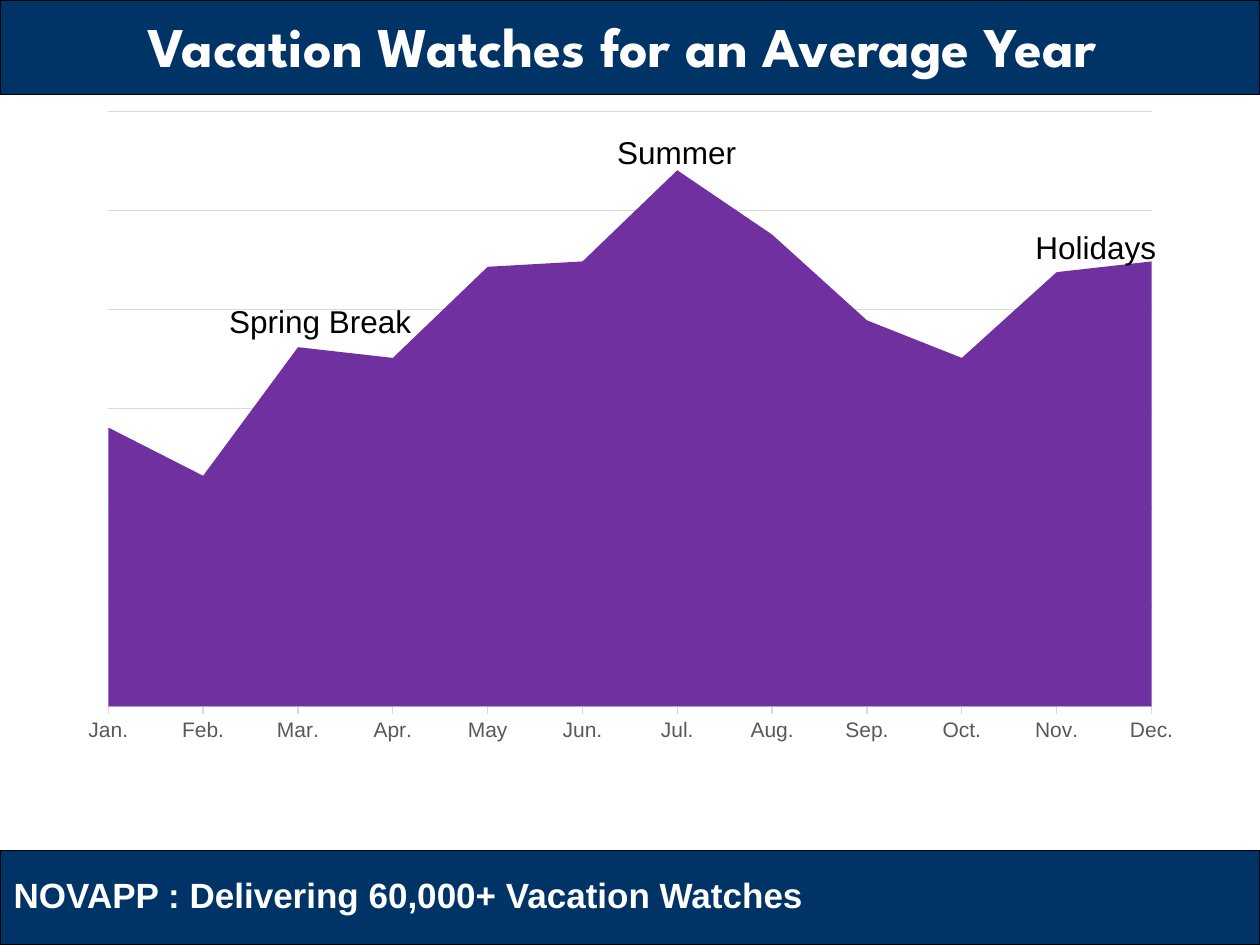
import pptx
import pptx.util
import pptx.chart.data
import pptx.dml.color
import pptx.enum.chart
import pptx.enum.shapes
import pptx.enum.text
import pptx.oxml
from pptx.oxml.ns import nsdecls, qn

Inches, Pt = pptx.util.Inches, pptx.util.Pt
RGBColor = pptx.dml.color.RGBColor

NAVY = RGBColor(0x00, 0x33, 0x66)
PURPLE = RGBColor(0x70, 0x30, 0xA0)
BLACK = RGBColor(0, 0, 0)
WHITE = RGBColor(0xFF, 0xFF, 0xFF)
GRAY = RGBColor(0x59, 0x59, 0x59)
GRID = RGBColor(0xD9, 0xD9, 0xD9)

TITLE = "Vacation Watches for an Average Year "
FOOTER = "NOVAPP : Delivering 60,000+ Vacation Watches"
WATCHES = {
    "Jan.": 52, "Feb.": 43, "Mar.": 67, "Apr.": 65, "May": 82, "Jun.": 83,
    "Jul.": 100, "Aug.": 88, "Sep.": 72, "Oct.": 65, "Nov.": 81, "Dec.": 83,
}
PEAKS = [
    ("Summer", 4.8, 1.01, 1.16),
    ("Spring Break", 1.72, 2.35, 1.66),
    ("Holidays", 8.12, 1.76, 1.17),
]
AXIS_MAX, GRID_STEPS = 111, 6
BAND_H = 0.75
PLOT_LAYOUT = {"x": 0.04, "y": 0.02, "w": 0.92, "h": 0.91}


def add_band(s, top):
    sp = s.shapes.add_shape(pptx.enum.shapes.MSO_SHAPE.RECTANGLE,
                            0, Inches(top), Inches(10), Inches(BAND_H))
    sp.shadow.inherit = False
    sp.fill.solid()
    sp.fill.fore_color.rgb = NAVY
    sp.line.color.rgb = BLACK
    sp.line.width = Pt(0.75)


def add_text(s, text, box, size, color, bold=False, font="Arial", wrap=False):
    tf = s.shapes.add_textbox(*map(Inches, box)).text_frame
    tf.word_wrap = wrap
    p = tf.paragraphs[0]
    p.text = text
    p.font.name, p.font.size, p.font.bold = font, Pt(size), bold
    p.font.color.rgb = color
    return tf


def add_area_chart(s):
    data = pptx.chart.data.CategoryChartData()
    data.categories = list(WATCHES)
    data.add_series("Series 1", list(WATCHES.values()))
    chart = s.shapes.add_chart(pptx.enum.chart.XL_CHART_TYPE.AREA, Inches(0.5), Inches(0.78),
                               Inches(9), Inches(5.19), data).chart
    chart.has_legend = False
    chart.has_title = False
    chart.font.name, chart.font.size = "Arial", Pt(10)
    chart.font.color.rgb = BLACK

    fill = chart.plots[0].series[0].format.fill
    fill.solid()
    fill.fore_color.rgb = PURPLE

    months, counts = chart.category_axis, chart.value_axis
    months.has_major_gridlines = False
    months.major_tick_mark = pptx.enum.chart.XL_TICK_MARK.OUTSIDE
    months.tick_labels.font.name = "Arial"
    months.tick_labels.font.size = Pt(12)
    months.tick_labels.font.color.rgb = GRAY

    counts.minimum_scale, counts.maximum_scale = 0, AXIS_MAX
    counts.major_unit = AXIS_MAX / GRID_STEPS
    counts.has_major_gridlines = True
    counts.visible = False
    for line in (months.format.line, counts.major_gridlines.format.line):
        line.color.rgb = GRID
        line.width = Pt(0.75)

    plot_area = chart._chartSpace.chart.plotArea
    plot_area.find(".//" + qn("c:crossBetween")).set("val", "midCat")
    for old in plot_area.findall(qn("c:layout")):
        plot_area.remove(old)
    modes = "".join(f'<c:{k}Mode val="edge"/>' for k in "xy")
    sizes = "".join(f'<c:{k} val="{v}"/>' for k, v in PLOT_LAYOUT.items())
    plot_area.insert(0, pptx.oxml.parse_xml(
        f'<c:layout {nsdecls("c")}><c:manualLayout><c:layoutTarget val="inner"/>'
        f'{modes}{sizes}</c:manualLayout></c:layout>'))


def main():
    prs = pptx.Presentation()
    prs.slide_width, prs.slide_height = Inches(10), Inches(7.5)
    s = prs.slides.add_slide(prs.slide_layouts[6])

    for top in (7.5 - BAND_H, 0):
        add_band(s, top)

    tf = add_text(s, TITLE, (0.5, 0, 9, 0.78), 32, WHITE, True, "League Spartan", True)
    tf.vertical_anchor = pptx.enum.text.MSO_ANCHOR.MIDDLE
    tf.paragraphs[0].alignment = pptx.enum.text.PP_ALIGN.CENTER
    tf.paragraphs[0].line_spacing = 0.9

    add_area_chart(s)
    for text, left, top, width in PEAKS:
        add_text(s, text, (left, top, width, 0.4), 18, BLACK)
    add_text(s, FOOTER, (0.01, 6.88, 6.55, 0.44), 20, WHITE, True)

    prs.save("out.pptx")


if __name__ == "__main__":
    main()
